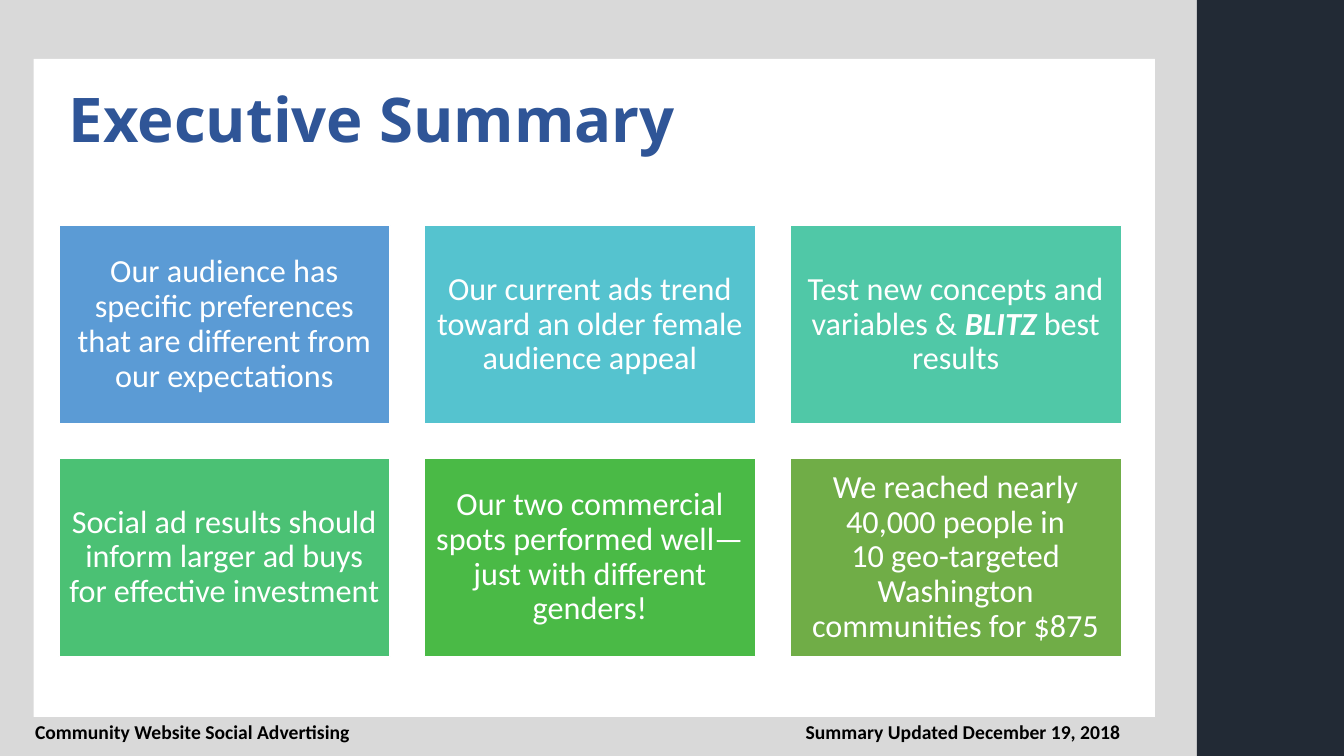
from dataclasses import dataclass

from pptx import Presentation
from pptx.dml.color import RGBColor
from pptx.enum.shapes import MSO_SHAPE
from pptx.enum.text import MSO_ANCHOR, PP_ALIGN
from pptx.util import Pt


@dataclass(frozen=True)
class Theme:
    backdrop: str = "D9D9D9"
    paper: str = "FFFFFF"
    sidebar: str = "222A35"
    title: str = "2F5597"
    ink: str = "000000"
    heading_font: str = "Noto Sans"
    body_font: str = "Calibri"
    title_size: float = 44
    card_size: float = 23
    footer_size: float = 14


THEME = Theme()
SLIDE_W, SLIDE_H = 960, 540

CARDS = [
    ("5B9BD5", ["Our audience has specific preferences that are different from our expectations"]),
    ("55C3CF", ["Our current ads trend toward an older female audience appeal"]),
    ("50C8A7", ["Test new concepts and variables & ", "BLITZ", " best results"]),
    ("4BC174", ["Social ad results should inform larger ad buys for effective investment"]),
    ("4ABA46", ["Our two commercial spots performed well—just with different genders!"]),
    ("70AD47", ["We reached nearly 40,000 people in\v10 geo-targeted Washington communities for $875"]),
]


def apply(target, values):
    for name, value in values.items():
        setattr(target, name, value)


def style_font(font, name, size, color, **flags):
    apply(font, {"name": name, "size": Pt(size), **flags})
    font.color.rgb = RGBColor.from_string(color)


def place(sp, box):
    apply(sp, dict(zip(("left", "top", "width", "height"), map(Pt, box))))


def add_rect(s, box, fill, line=None):
    sp = s.shapes.add_shape(MSO_SHAPE.RECTANGLE, *map(Pt, box))
    sp.shadow.inherit = False
    sp.fill.solid()
    sp.fill.fore_color.rgb = RGBColor.from_string(fill)
    if line:
        sp.line.color.rgb = RGBColor.from_string(line)
        sp.line.width = Pt(1)
    else:
        sp.line.fill.background()
    return sp


def add_background(s, box):
    x, y, w, h = box
    sidebar_w = 105
    main_w = w - sidebar_w
    add_rect(s, (x, y, main_w, h), THEME.backdrop)
    add_rect(s, (x + 24, y + 42, main_w - 54, h - 70), THEME.paper)
    add_rect(s, (x + main_w, y, sidebar_w, h), THEME.sidebar)


def add_title(s, box, text):
    sp = s.shapes.title
    s.shapes.element.append(sp.element)
    place(sp, box)
    tf = sp.text_frame
    apply(tf, {"word_wrap": True, "vertical_anchor": MSO_ANCHOR.MIDDLE})
    p = tf.paragraphs[0]
    p.text = text
    apply(p, {"alignment": PP_ALIGN.LEFT, "line_spacing": 0.9})
    style_font(p.runs[0].font, THEME.heading_font, THEME.title_size, THEME.title, bold=True)


def add_card(s, box, fill, parts):
    tf = add_rect(s, box, fill, THEME.paper).text_frame
    margins = ("margin_left", "margin_top", "margin_right", "margin_bottom")
    apply(tf, {"word_wrap": True, "vertical_anchor": MSO_ANCHOR.MIDDLE,
               **dict.fromkeys(margins, Pt(7))})
    p = tf.paragraphs[0]
    apply(p, {"alignment": PP_ALIGN.CENTER, "line_spacing": 0.9})
    for part in parts:
        for i, line in enumerate(part.split("\v")):
            if i:
                p.add_line_break()
            r = p.add_run()
            r.text = line
            strong = part == "BLITZ"
            style_font(r.font, THEME.body_font, THEME.card_size, THEME.paper,
                       bold=strong, italic=strong)


def add_card_grid(s, box, cards, columns=3):
    x, y, w, h = box
    gap = 24.5
    rows = len(cards) // columns
    card_w = (w - gap * (columns - 1)) / columns
    card_h = (h - gap * (rows - 1)) / rows
    for i, (fill, parts) in enumerate(cards):
        row, column = divmod(i, columns)
        add_card(s, (x + column * (card_w + gap), y + row * (card_h + gap), card_w, card_h),
                 fill, parts)


def add_footer(s, box, left_text, right_text):
    x, y, w, h = box
    note_w = 376
    notes = [(x, left_text, PP_ALIGN.LEFT), (x + w - note_w, right_text, PP_ALIGN.RIGHT)]
    for note_x, text, align in notes:
        tf = s.shapes.add_textbox(*map(Pt, (note_x, y, note_w, h))).text_frame
        tf.word_wrap = True
        p = tf.paragraphs[0]
        p.text = text
        p.alignment = align
        style_font(p.runs[0].font, THEME.body_font, THEME.footer_size, THEME.ink, bold=True)


def build_summary(prs):
    s = prs.slides.add_slide(prs.slide_layouts[5])
    add_background(s, (0, 0, SLIDE_W, SLIDE_H))
    add_title(s, (42, 42, 759, 90.5), "Executive Summary")
    add_card_grid(s, (42, 161, 759, 308), CARDS)
    add_footer(s, (18, 511, 789.5, 24.5),
               "Community Website Social Advertising", "Summary Updated December 19, 2018")


def main():
    prs = Presentation()
    apply(prs, {"slide_width": Pt(SLIDE_W), "slide_height": Pt(SLIDE_H)})
    build_summary(prs)
    prs.save("out.pptx")


if __name__ == "__main__":
    main()
